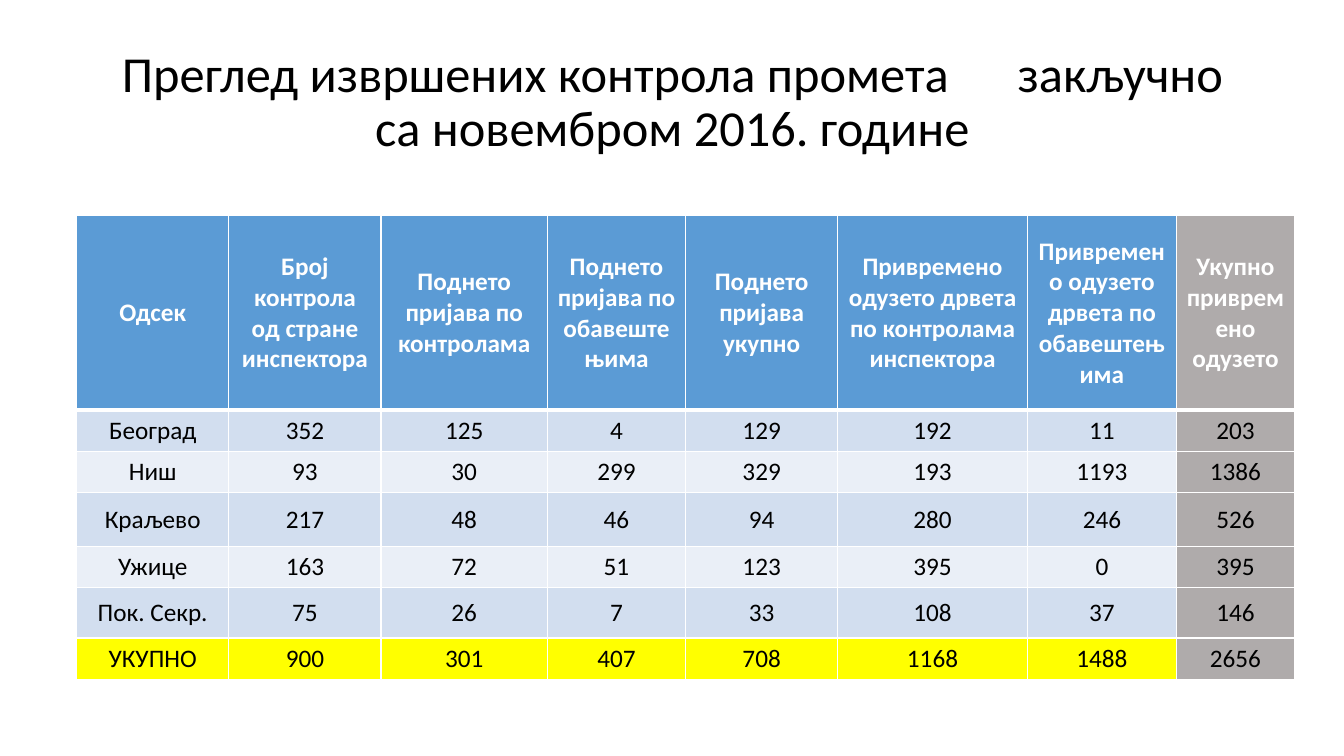
from lxml import etree
from pptx import Presentation
from pptx import util as u
from pptx.dml import color
from pptx.enum import text
from pptx.oxml import ns

THEME = {
    "font": "Calibri",
    "title_size": u.Pt(36), "table_size": u.Pt(18),
    "ink": "000000", "white": "FFFFFF",
    "header": "5B9BD5", "bands": ("D2DEEF", "EAEFF7"),
    "sum_row": "FFFF00", "sum_column": "AFABAB",
    "rule": u.Pt(1), "header_rule": u.Pt(3),
}


def style_run(run, size, ink, bold=False):
    for name, value in {"name": THEME["font"], "size": size, "bold": bold}.items():
        setattr(run.font, name, value)
    run.font.color.rgb = color.RGBColor.from_string(ink)


def draw_borders(cell, widths):
    properties = cell._tc.get_or_add_tcPr()
    for side, width in widths.items():
        border = etree.SubElement(properties, ns.qn(f"a:ln{side}"), w=str(width))
        fill = etree.SubElement(border, ns.qn("a:solidFill"))
        etree.SubElement(fill, ns.qn("a:srgbClr"), val=THEME["white"])


presentation = Presentation()
presentation.slide_width = u.Inches(13.33)
presentation.slide_height = u.Inches(7.5)
slide = presentation.slides.add_slide(presentation.slide_layouts[6])

# Title: one widely tracked space makes the gap before "закључно"
title = slide.shapes.add_textbox(
    u.Inches(0.92), u.Inches(0.4), u.Inches(11.5), u.Inches(1.25)).text_frame
for name, value in {"word_wrap": True, "vertical_anchor": text.MSO_ANCHOR.MIDDLE}.items():
    setattr(title, name, value)
heading = title.paragraphs[0]
for name, value in {"alignment": text.PP_ALIGN.CENTER, "line_spacing": 0.9}.items():
    setattr(heading, name, value)
for wording, tracking in (
    ("Преглед извршених контрола промета", 0),
    (" ", 4070),
    ("закључно са новембром 2016. године", 0),
):
    part = heading.add_run()
    part.text = wording
    style_run(part, THEME["title_size"], THEME["ink"])
    if tracking:
        part.font._element.set("spc", str(tracking))

# Inspection figures by department
inspections = (
    ("Одсек", "Број контрола од стране инспектора", "Поднето пријава по контролама",
     "Поднето пријава по обавештењима", "Поднето пријава укупно",
     "Привремено одузето дрвета по контролама инспектора",
     "Привремено одузето дрвета по обавештењима", "Укупно привремено одузето"),
    ("Београд", 352, 125, 4, 129, 192, 11, 203),
    ("Ниш", 93, 30, 299, 329, 193, 1193, 1386),
    ("Краљево", 217, 48, 46, 94, 280, 246, 526),
    ("Ужице", 163, 72, 51, 123, 395, 0, 395),
    ("Пок. Секр.", 75, 26, 7, 33, 108, 37, 146),
    ("УКУПНО", 900, 301, 407, 708, 1168, 1488, 2656),
)
column_widths = (1.51, 1.51, 1.65, 1.37, 1.51, 1.88, 1.48, 1.17)
row_heights = (1.93, 0.41, 0.41, 0.53, 0.41, 0.5, 0.41)
last_row, last_column = len(row_heights) - 1, len(column_widths) - 1

overview = slide.shapes.add_table(
    len(row_heights), len(column_widths), u.Inches(0.76), u.Inches(2.14),
    u.Inches(sum(column_widths)), u.Inches(sum(row_heights))).table
for column, width in zip(overview.columns, column_widths):
    column.width = u.Inches(width)
for row, height in zip(overview.rows, row_heights):
    row.height = u.Inches(height)

# Cells: wording, borders and fills
for r, record in enumerate(inspections):
    is_header = r == 0
    if is_header:
        row_fill = THEME["header"]
    elif r == last_row:
        row_fill = THEME["sum_row"]
    else:
        row_fill = THEME["bands"][(r - 1) % 2]
    borders = {
        "L": THEME["rule"], "R": THEME["rule"],
        "T": THEME["header_rule"] if r == 1 else THEME["rule"],
        "B": THEME["header_rule"] if is_header else THEME["rule"],
    }
    for c, entry in enumerate(record):
        cell = overview.cell(r, c)
        cell.vertical_anchor = text.MSO_ANCHOR.MIDDLE
        draw_borders(cell, borders)
        cell.fill.solid()
        cell.fill.fore_color.rgb = color.RGBColor.from_string(
            THEME["sum_column"] if c == last_column else row_fill)
        line = cell.text_frame.paragraphs[0]
        line.alignment = text.PP_ALIGN.CENTER
        label = line.add_run()
        label.text = str(entry)
        style_run(label, THEME["table_size"],
                  THEME["white"] if is_header else THEME["ink"], is_header)

presentation.save("out.pptx")
